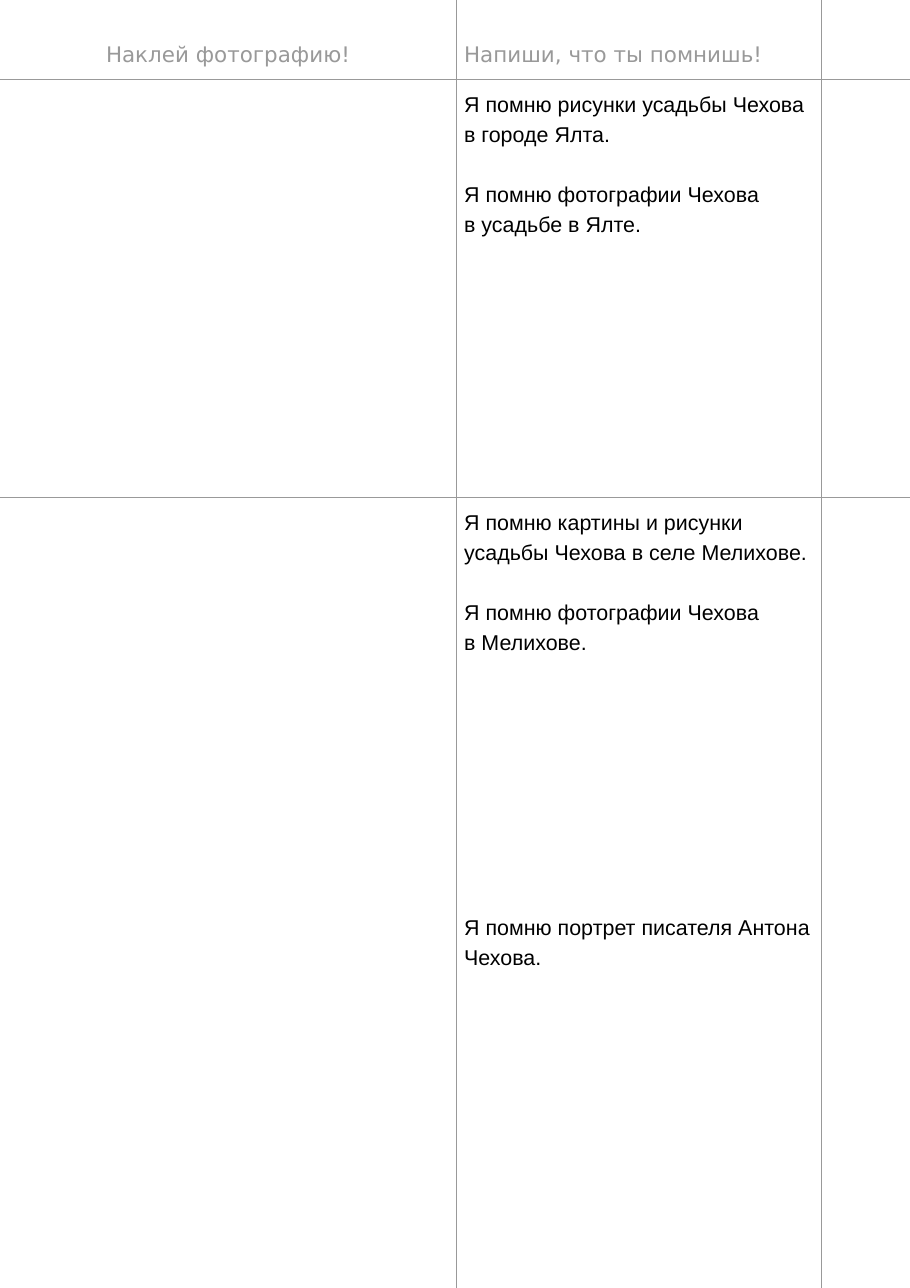
"""Build a memory album page: a photo column beside a column of written memories."""
from lxml import etree
from pptx import Presentation
from pptx.dml.color import RGBColor
from pptx.enum.text import MSO_ANCHOR, PP_ALIGN
from pptx.oxml.ns import qn
from pptx.util import Cm, Pt

LEFT, CENTER, TOP = PP_ALIGN.LEFT, PP_ALIGN.CENTER, MSO_ANCHOR.TOP

PHOTO_HEADING = "Наклей фотографию!"
MEMORY_HEADING = "Напиши, что ты помнишь!"
MEMORIES = [
    [
        ["Я помню рисунки усадьбы Чехова в городе Ялта."],
        ["Я помню фотографии Чехова", "в усадьбе в Ялте."],
    ],
    [
        ["Я помню картины и рисунки усадьбы Чехова в селе Мелихове."],
        ["Я помню фотографии Чехова", "в Мелихове."],
    ],
    [["Я помню портрет писателя Антона Чехова."]],
]

PAGE_SIZE = (20.98, 29.69)
COLUMN_WIDTHS = (10.52, 8.41, 2.08)
ROW_HEIGHTS = (1.83, 9.63, 9.35, 8.94)
RULED_ROWS = (0, 1)
INSET = 0.18
HEADING_INSET = 0.87

THEME = {
    "heading_font": "DejaVu Sans",
    "memory_font": "Arial",
    "heading_color": "999999",
    "memory_color": "000000",
    "rule_color": "999999",
    "paper": "FFFFFF",
    "size": 14,
    "line_spacing": 19.6,
    "rule_width": 0.53,
}


def write_text(cell, blocks, *, font, color, align=LEFT):
    """Write blocks of lines, with one line of space between blocks."""
    frame = cell.text_frame
    lines = [(line, block and not place)
             for block, block_lines in enumerate(blocks)
             for place, line in enumerate(block_lines)]
    for index, (line, opens_block) in enumerate(lines):
        paragraph = frame.add_paragraph() if index else frame.paragraphs[0]
        paragraph.alignment = align
        paragraph.line_spacing = Pt(THEME["line_spacing"])
        if opens_block:
            paragraph.space_before = Pt(THEME["line_spacing"])
        run = paragraph.add_run()
        run.text = line
        run.font.name = font
        run.font.size = Pt(THEME["size"])
        run.font.color.rgb = RGBColor.from_string(color)


def rule_cell(cell, ruled_sides):
    """Draw the ruled sides of a cell and clear the others."""
    properties = cell._tc.get_or_add_tcPr()
    for position, side in enumerate("LRTB"):
        edge = etree.Element(qn(f"a:ln{side}"))
        if side in ruled_sides:
            edge.set("w", str(Pt(THEME["rule_width"])))
            fill = etree.SubElement(edge, qn("a:solidFill"))
            etree.SubElement(fill, qn("a:srgbClr"), val=THEME["rule_color"])
        else:
            etree.SubElement(edge, qn("a:noFill"))
        properties.insert(position, edge)


def format_cell(cell, row, column):
    """Set the insets, fill and rules of a cell from its place in the grid."""
    cell.vertical_anchor = TOP
    cell.margin_left = cell.margin_right = cell.margin_bottom = Cm(INSET)
    cell.margin_top = Cm(INSET if row else HEADING_INSET)
    cell.fill.solid()
    cell.fill.fore_color.rgb = RGBColor.from_string(THEME["paper"])
    sides = {
        "L": column > 0,
        "R": column < len(COLUMN_WIDTHS) - 1,
        "T": row - 1 in RULED_ROWS,
        "B": row in RULED_ROWS,
    }
    rule_cell(cell, [side for side, ruled in sides.items() if ruled])


def main():
    """Assemble the page and save it."""
    presentation = Presentation()
    presentation.slide_width, presentation.slide_height = map(Cm, PAGE_SIZE)
    slide = presentation.slides.add_slide(presentation.slide_layouts[6])
    album = slide.shapes.add_table(
        len(ROW_HEIGHTS), len(COLUMN_WIDTHS), 0, 0,
        Cm(sum(COLUMN_WIDTHS)), Cm(sum(ROW_HEIGHTS)),
    ).table
    album.first_row = album.horz_banding = False
    for column, width in zip(album.columns, COLUMN_WIDTHS):
        column.width = Cm(width)
    for row, height in zip(album.rows, ROW_HEIGHTS):
        row.height = Cm(height)
    for row in range(len(ROW_HEIGHTS)):
        for column in range(len(COLUMN_WIDTHS)):
            format_cell(album.cell(row, column), row, column)

    heading = {"font": THEME["heading_font"], "color": THEME["heading_color"]}
    write_text(album.cell(0, 0), [[PHOTO_HEADING]], align=CENTER, **heading)
    write_text(album.cell(0, 1), [[MEMORY_HEADING]], **heading)
    for row, memory in enumerate(MEMORIES, start=1):
        write_text(album.cell(row, 1), memory,
                   font=THEME["memory_font"], color=THEME["memory_color"])
    presentation.save("out.pptx")


if __name__ == "__main__":
    main()
